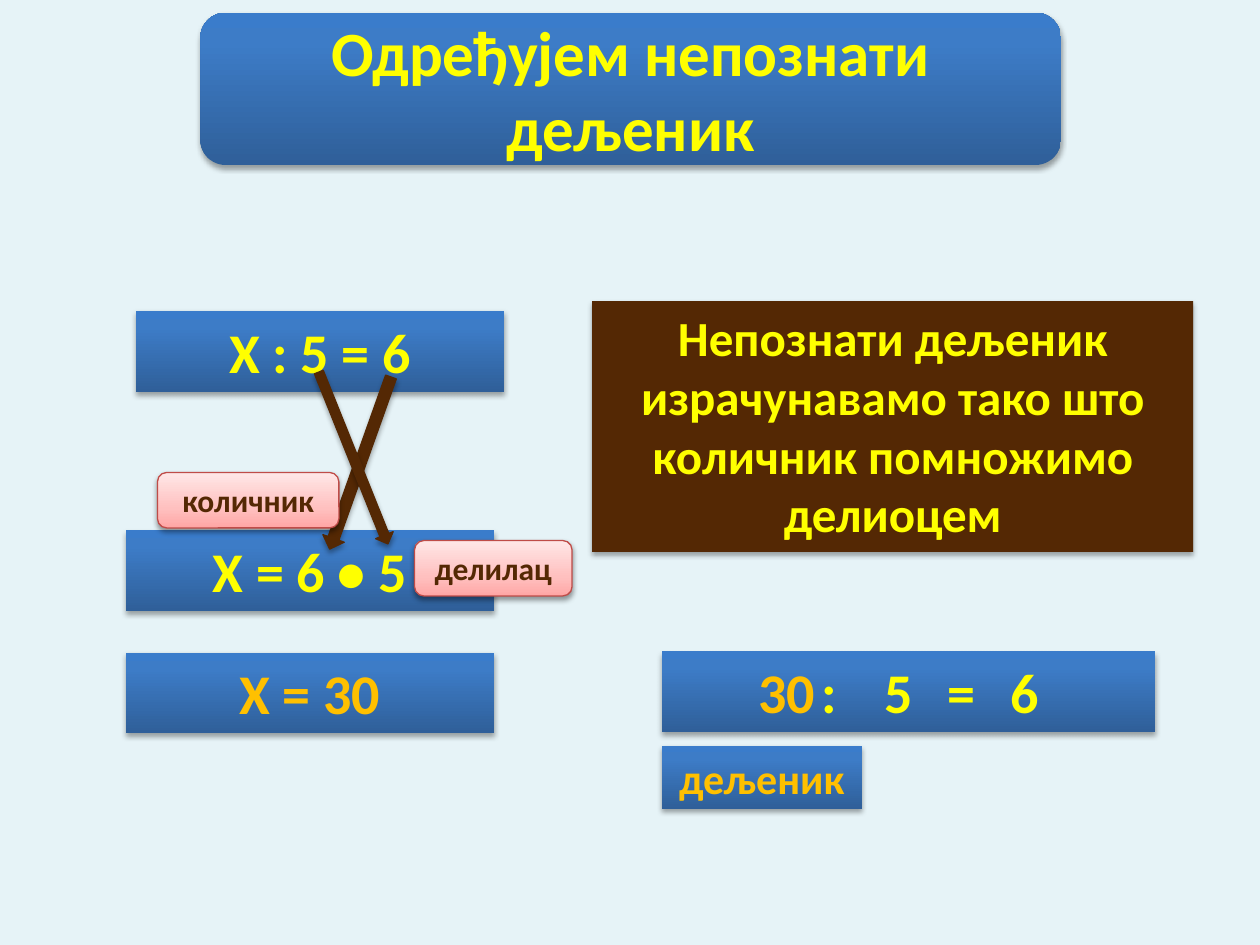
from lxml import etree
from pptx import Presentation
from pptx.dml.color import RGBColor
from pptx.enum.shapes import MSO_SHAPE as Shape
from pptx.enum.text import MSO_ANCHOR as Anchor, MSO_AUTO_SIZE as AutoSize, PP_ALIGN as Align
from pptx.oxml import parse_xml
from pptx.oxml.ns import nsdecls, qn
from pptx.util import Inches, Pt

COLORS = {
    "background": "E6F3F7",
    "brown": "542804",
    "yellow": "FFFF00",
    "orange": "FFC000",
    "label_line": "BF4C48",
}
BLUE_STOPS = [(0, "2F5F99"), (80, "3D7CC7"), (100, "3A7CCB")]
PINK_STOPS = [(0, "FFA6A5"), (35, "FFC0BF"), (100, "FFE7E7")]


def rgb(name):
    return RGBColor.from_string(COLORS[name])


def fill_gradient(shape, stops):
    """Fill from bottom to top with (percent, hex) stops."""
    shape.fill.gradient()
    shape.fill.gradient_angle = 90
    stop_list = next(shape.element.spPr.iter(qn("a:gsLst")))
    for old_stop in list(stop_list):
        stop_list.remove(old_stop)
    for percent, color in stops:
        stop = etree.SubElement(stop_list, qn("a:gs"), pos=str(percent * 1000))
        etree.SubElement(stop, qn("a:srgbClr"), val=color)


def add_shadow(shape, opacity):
    shape.shadow.inherit = False
    effects = shape.element.spPr.find(qn("a:effectLst"))
    effects.append(parse_xml(
        f'<a:outerShdw {nsdecls("a")} blurRad="{Pt(3.1)}" dist="{Pt(1.8)}" '
        'dir="5400000" rotWithShape="0"><a:srgbClr val="000000">'
        f'<a:alpha val="{opacity * 1000}"/></a:srgbClr></a:outerShdw>'))


def add_block(slide, kind, box, fill, line=None, opacity=35):
    """Add a shadowed shape; fill is a color name or a list of stops."""
    block = slide.shapes.add_shape(kind, *map(Inches, box))
    if isinstance(fill, str):
        block.fill.solid()
        block.fill.fore_color.rgb = rgb(fill)
    else:
        fill_gradient(block, fill)
    if line:
        block.line.color.rgb = rgb(line)
        block.line.width = Pt(0.75)
    else:
        block.line.fill.background()
    add_shadow(block, opacity)
    return block


def format_run(run, size, color):
    run.font.name = "Calibri"
    run.font.size = Pt(size)
    run.font.bold = True
    run.font.color.rgb = rgb(color)


def write(block, text, size, color, anchor=Anchor.MIDDLE):
    frame = block.text_frame
    frame.word_wrap = True
    frame.vertical_anchor = anchor
    frame.text = text
    for paragraph in frame.paragraphs:
        paragraph.alignment = Align.CENTER
        for run in paragraph.runs:
            format_run(run, size, color)


def add_panel(slide, box, text, size=32, color="yellow", fill=BLUE_STOPS):
    panel = add_block(slide, Shape.RECTANGLE, box, fill)
    write(panel, text, size, color, Anchor.TOP)
    panel.text_frame.auto_size = AutoSize.SHAPE_TO_FIT_TEXT
    return panel


def add_label(slide, box, text):
    label = add_block(slide, Shape.ROUNDED_RECTANGLE, box, PINK_STOPS, "label_line", 38)
    write(label, text, 18, "brown")


def add_arrow(slide, box, rotation):
    arrow = add_block(slide, Shape.DOWN_ARROW, box, "brown", "brown")
    arrow.rotation = rotation


def add_check(slide):
    """Add the solved equation, its parts spread out on tab stops."""
    panel = add_panel(slide, (5.25, 5.17, 3.92, 0.64), "30\t:\t5\t=\t6")
    paragraph = panel.text_frame.paragraphs[0]
    paragraph.text = "30"
    paragraph.alignment = Align.LEFT
    paragraph.add_run().text = "\t:\t5\t=\t6"
    for run, color in zip(paragraph.runs, ("orange", "yellow")):
        format_run(run, 32, color)
    properties = paragraph._p.get_or_add_pPr()
    properties.set("marL", str(Inches(0.67)))
    properties.set("indent", "0")
    tabs = etree.SubElement(properties, qn("a:tabLst"))
    for stop in (1.41, 1.94, 2.57, 3.09):
        etree.SubElement(tabs, qn("a:tab"), pos=str(Inches(stop)), algn="l")


def main():
    deck = Presentation()
    deck.slide_width, deck.slide_height = Inches(10), Inches(7.5)
    slide = deck.slides.add_slide(deck.slide_layouts[6])
    slide.background.fill.solid()
    slide.background.fill.fore_color.rgb = rgb("background")

    add_check(slide)
    add_panel(slide, (4.7, 2.39, 4.77, 1.99),
              "Непознати дељеник израчунавамо тако што количник помножимо\nделиоцем",
              28, fill="brown")
    title = add_block(slide, Shape.ROUNDED_RECTANGLE, (1.59, 0.1, 6.83, 1.21), BLUE_STOPS)
    write(title, "Одређујем непознати дељеник", 36, "yellow")
    add_panel(slide, (5.25, 5.92, 1.59, 0.5), "дељеник", 24, "orange")

    for left, top, equation, color in (
        (1.08, 2.47, "Х : 5 = 6", "yellow"),
        (1, 5.18, "Х = 30", "orange"),
        (1, 4.21, "Х = 6 • 5", "yellow"),
    ):
        add_panel(slide, (left, top, 2.92, 0.64), equation, color=color)

    add_arrow(slide, (2.77, 2.95, 0.18, 1.45), 19.6)
    add_arrow(slide, (2.73, 2.9, 0.15, 1.47), 338.1)
    add_label(slide, (3.29, 4.29, 1.25, 0.44), "делилац")
    add_label(slide, (1.25, 3.75, 1.44, 0.44), "количник")

    deck.save("out.pptx")


if __name__ == "__main__":
    main()
